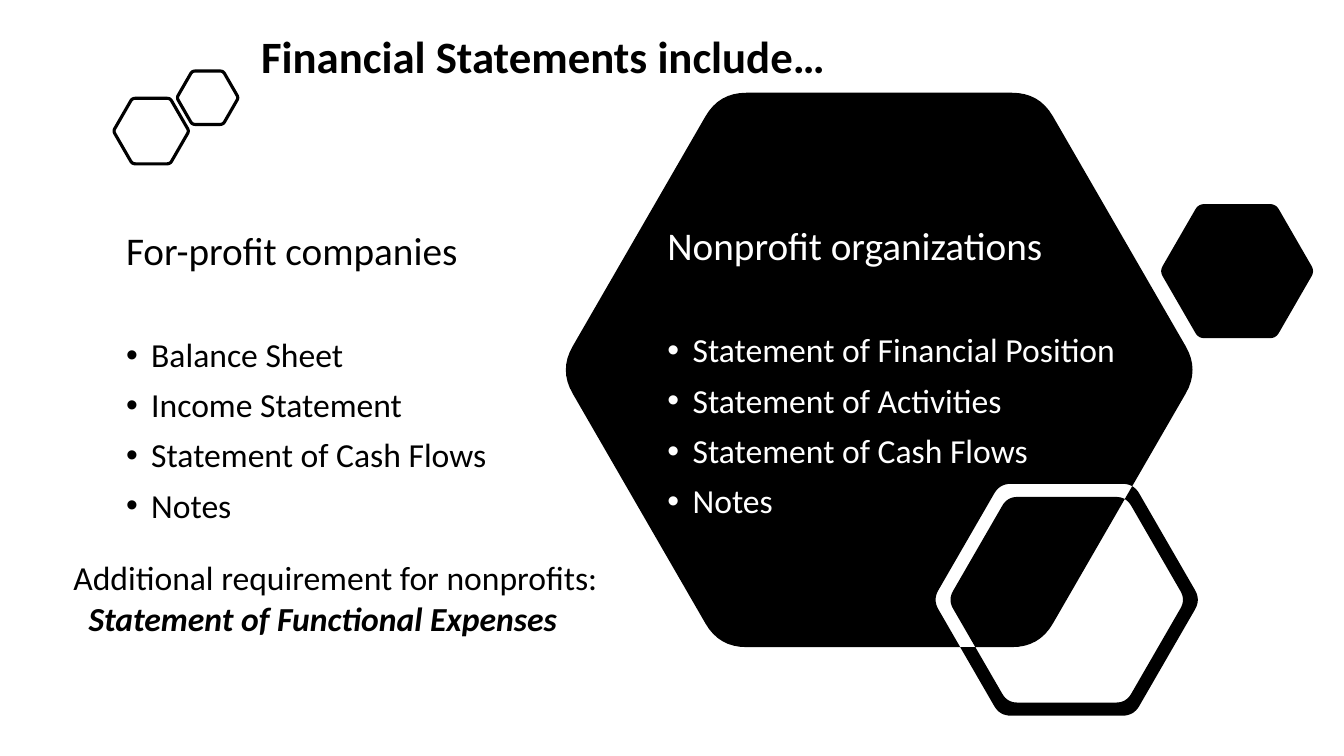
"""Builds a slide comparing for-profit and nonprofit financial statements."""
import math

import pptx
import pptx.dml.color
import pptx.enum.text
import pptx.util
from lxml import etree
from pptx.oxml.ns import qn

Inches = pptx.util.Inches
Pt = pptx.util.Pt
Anchor = pptx.enum.text.MSO_ANCHOR


def colour(code):
    return pptx.dml.color.RGBColor.from_string(code)


def rounded_hexagon(centre_x, centre_y, height, cut, steps=8):
    side = height / math.sqrt(3)
    corners = [(centre_x + side * math.cos(math.radians(60 * turn)),
                centre_y + side * math.sin(math.radians(60 * turn)))
               for turn in range(6)]
    points = []
    for index, corner in enumerate(corners):
        start, end = [
            [here + (there - here) * cut / side for here, there in zip(corner, neighbour)]
            for neighbour in (corners[index - 1], corners[(index + 1) % 6])]
        for step in range(steps + 1):
            t = step / steps
            points.append(tuple(
                Inches((1 - t) ** 2 * a + 2 * t * (1 - t) * b + t ** 2 * c)
                for a, b, c in zip(start, corner, end)))
    return points


class StatementSlide:
    font = "Calibri"
    black = "000000"
    white = "FFFFFF"
    heading_size = 28
    text_size = 24

    def __init__(self, deck):
        self.page = deck.slides.add_slide(deck.slide_layouts[3])
        self.title_box, self.left_box, self.right_box = self.page.placeholders

    def place(self, box, left, top, width, height, anchor):
        box.left, box.top = Inches(left), Inches(top)
        box.width, box.height = Inches(width), Inches(height)
        frame = box.text_frame
        frame.word_wrap = True
        frame.auto_size = pptx.enum.text.MSO_AUTO_SIZE.NONE
        frame.vertical_anchor = anchor
        return frame

    def style(self, para, size, code, bold=False, italic=False):
        para.alignment = pptx.enum.text.PP_ALIGN.LEFT
        for span in para.runs:
            span.font.name = self.font
            span.font.size = Pt(size)
            span.font.color.rgb = colour(code)
            span.font.bold = bold
            span.font.italic = italic

    def indent(self, para, left, first=0, bullet=None):
        properties = para._p.get_or_add_pPr()
        properties.set("marL", str(Inches(left)))
        properties.set("indent", str(Inches(first)))
        if bullet:
            etree.SubElement(properties, qn("a:buFont")).set("typeface", "Arial")
            etree.SubElement(properties, qn("a:buChar")).set("char", bullet)
        else:
            etree.SubElement(properties, qn("a:buNone"))

    def title(self, text, *area):
        frame = self.place(self.title_box, *area, Anchor.TOP)
        frame.text = text
        self.style(frame.paragraphs[0], 32, self.black, bold=True)

    def statement_list(self, box, area, code, heading, items):
        frame = self.place(box, *area, Anchor.MIDDLE)
        frame.text = "\n".join([heading, *items])
        for index, para in enumerate(frame.paragraphs):
            para.line_spacing = 0.9
            para.space_before = Pt(46 if index == 1 else 10)
            self.style(para, self.text_size if index else self.heading_size, code)
            if index:
                self.indent(para, 0.25, -0.25, "•")
            else:
                self.indent(para, 0)

    def requirement(self, lead, statement, *area):
        box = self.page.shapes.add_textbox(0, 0, 0, 0)
        frame = self.place(box, *area, Anchor.TOP)
        frame.text = f"{lead}\n{statement}"
        first, second = frame.paragraphs
        self.style(first, self.text_size, self.black)
        self.style(second, self.text_size, self.black, bold=True, italic=True)
        self.indent(second, 0.15)

    def hexagons(self, outlines, filled):
        contours = [rounded_hexagon(*outline) for outline in outlines]
        builder = self.page.shapes.build_freeform(*contours[0][0])
        builder.add_line_segments(contours[0][1:])
        for contour in contours[1:]:
            builder.move_to(*contour[0])
            builder.add_line_segments(contour[1:])
        shape = builder.convert_to_shape()
        shape.shadow.inherit = False
        if filled:
            shape.fill.solid()
            shape.fill.fore_color.rgb = colour(self.black)
            shape.line.fill.background()
        else:
            shape.fill.background()
            shape.line.color.rgb = colour(self.black)
            shape.line.width = Pt(2.25)
        self.page.shapes._spTree.insert(2, shape._element)


def main():
    deck = pptx.Presentation()
    deck.slide_width, deck.slide_height = Inches(13.33), Inches(7.5)
    slide = StatementSlide(deck)

    large = (8.72, 3.67, 5.5, 0.27)
    right = (12.27, 2.69, 1.33, 0.06)
    ring_outer = (10.58, 5.95, 2.3, 0.11)
    ring_inner = (10.58, 5.95, 2.04, 0.1)
    slide.hexagons([large, right, ring_outer, ring_inner], filled=True)
    for outline in ((2.06, 0.97, 0.53, 0.03), (1.5, 1.3, 0.65, 0.03)):
        slide.hexagons([outline], filled=False)

    slide.title("Financial Statements include…", 2.49, 0.23, 9.84, 0.64)
    slide.statement_list(
        slide.left_box, (1.15, 1.55, 4.26, 4.41), slide.black, "For-profit companies",
        ["Balance Sheet", "Income Statement", "Statement of Cash Flows", "Notes"])
    slide.statement_list(
        slide.right_box, (6.52, 1.63, 5.03, 4.16), slide.white, "Nonprofit organizations",
        ["Statement of Financial Position", "Statement of Activities",
         "Statement of Cash Flows", "Notes"])
    slide.requirement("Additional requirement for nonprofits:",
                      "Statement of Functional Expenses", 0.63, 5.48, 6.17, 0.91)
    deck.save("out.pptx")


if __name__ == "__main__":
    main()
